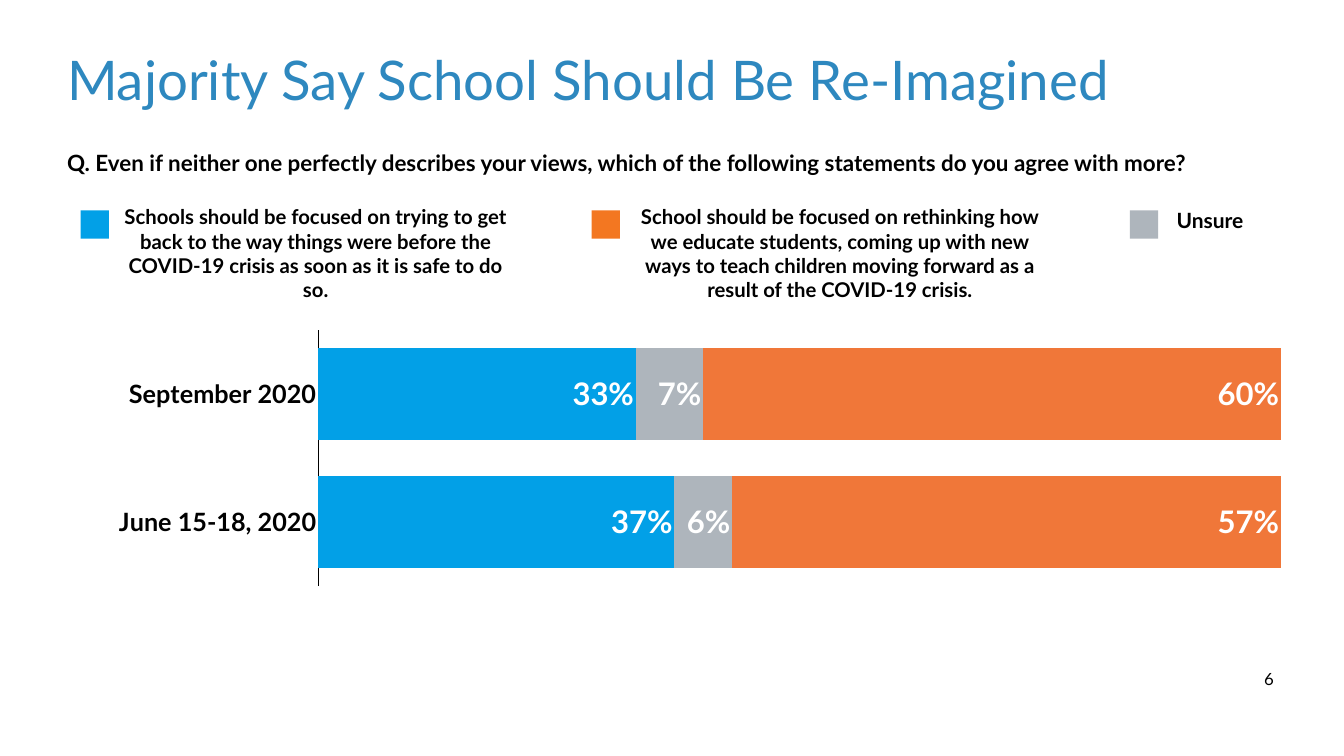
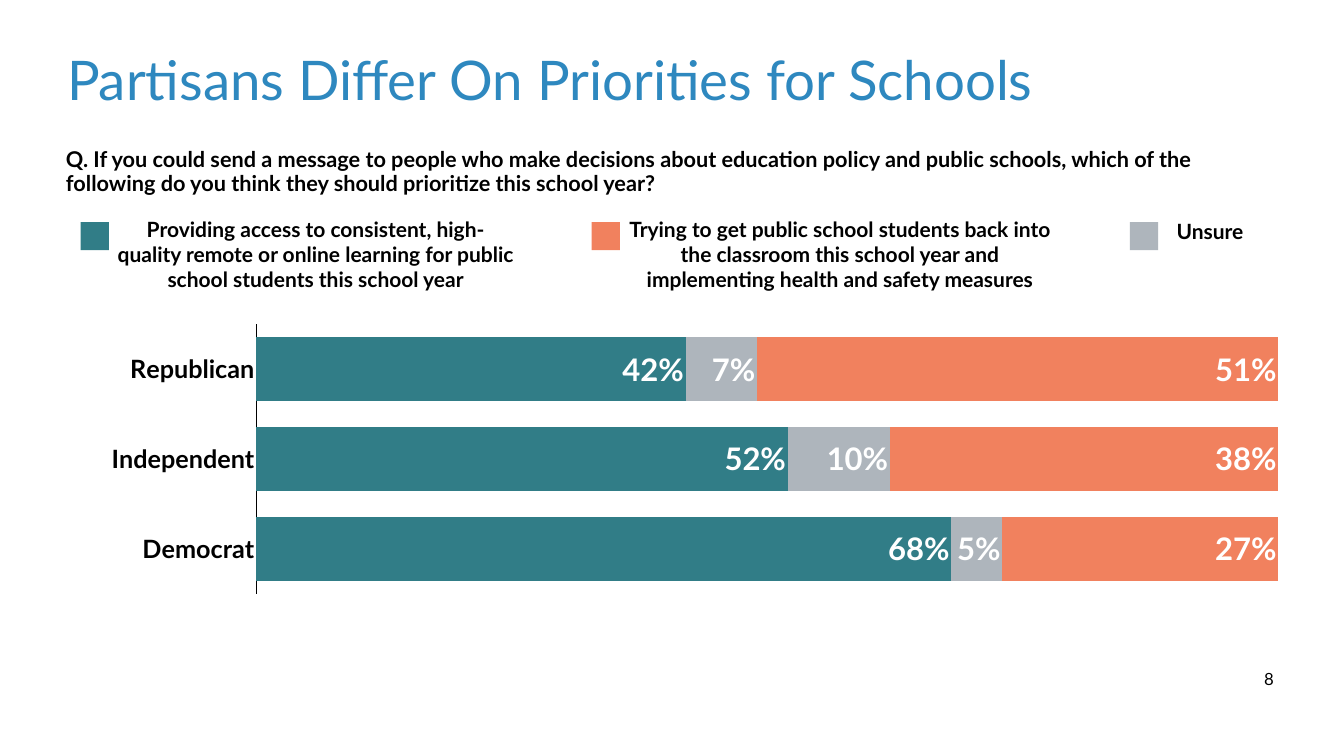
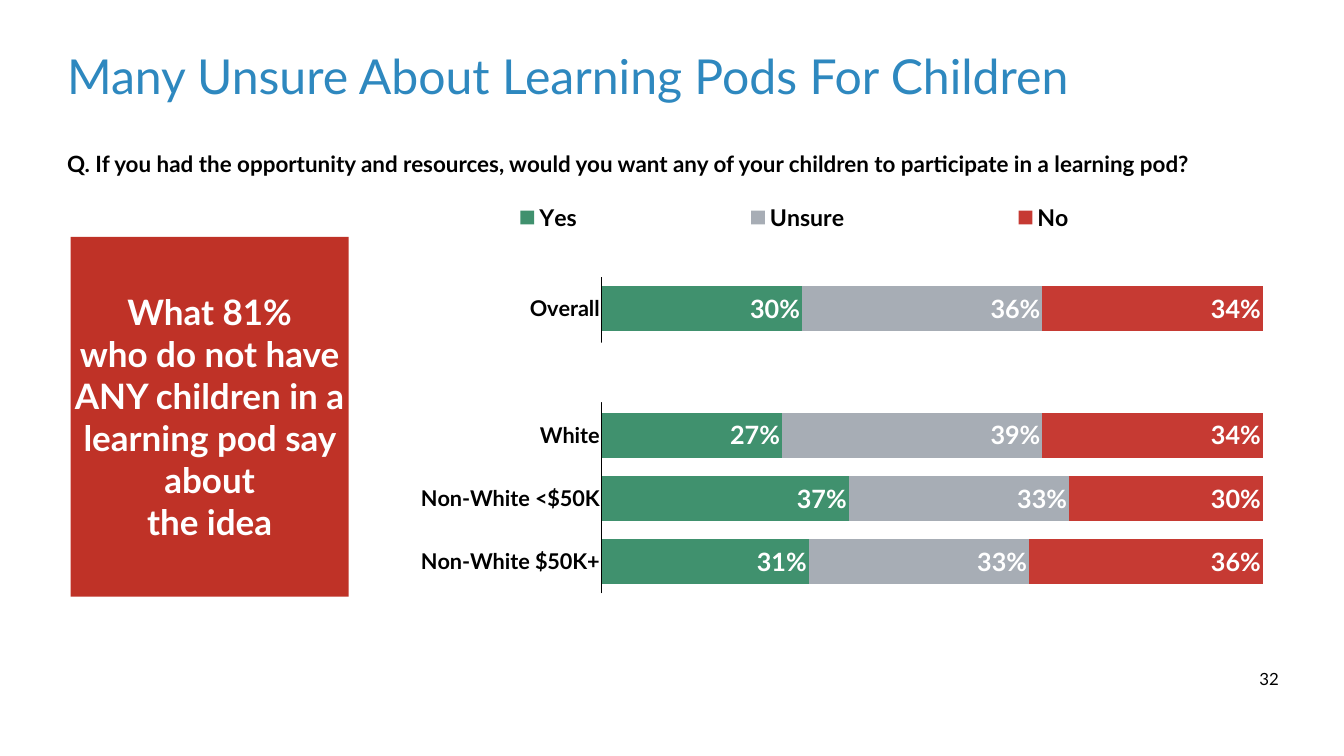
from lxml import etree
from pptx import Presentation
from pptx import util as u
from pptx.chart import data as cd
from pptx.dml import color as dc
from pptx.enum import chart as ec, shapes, text
from pptx.oxml import ns

WIDE, HIGH = 26.67, 15
COL, ROW = WIDE / 100, HIGH / 100
FONT = "Lato"
HUE = {
    "title": "2E88BF", "ink": "000000", "white": "FFFFFF", "gray": "AEB5BC",
    "blue": "02A0E7", "orange": "F07739", "key": "F37721",
    "teal": "317D87", "coral": "F1815E",
    "green": "40916E", "slate": "A7ADB5", "red": "C63A33", "brick": "BF3227",
}
MID = text.PP_ALIGN.CENTER
LEFT = text.PP_ALIGN.LEFT
AXIS = {"has_major_gridlines": False, "has_minor_gridlines": False,
        "major_tick_mark": ec.XL_TICK_MARK.NONE, "minor_tick_mark": ec.XL_TICK_MARK.NONE}
PLOT = {"gap_width": 40, "overlap": 100, "vary_by_categories": False}
LABEL = {"show_value": True, "number_format": "#,##0%", "number_format_is_linked": False,
         "position": ec.XL_LABEL_POSITION.INSIDE_END}
INSET = {f"margin_{side}": u.Inches(0.08) for side in ("left", "top", "right", "bottom")}


def put(item, vals):
    for name, val in vals.items():
        setattr(item, name, val)


def rgb(hue):
    return dc.RGBColor.from_string(HUE[hue])


def style(font, size, hue="ink", bold=True):
    put(font, {"name": FONT, "size": u.Pt(size), "bold": bold})
    font.color.rgb = rgb(hue)


def grid(box):
    x, y, w, h = box
    return [u.Inches(n) for n in (x * COL, y * ROW, w * COL, h * ROW)]


def fill(frame, lines, size, hue="ink", bold=True, align=LEFT, wrap=True,
         anchor=text.MSO_ANCHOR.TOP, space=None):
    put(frame, INSET | {"word_wrap": wrap, "vertical_anchor": anchor})
    frame.text = "\n".join(lines)
    for para in frame.paragraphs:
        put(para, {"alignment": align, "line_spacing": space})
        style(para.runs[0].font, size, hue, bold)


def write(area, box, line, size, **look):
    fill(area.add_textbox(*grid(box)).text_frame, [line], size, **look)


def block(area, box, hue):
    rect = area.add_shape(shapes.MSO_SHAPE.RECTANGLE, *grid(box))
    rect.shadow.inherit = False
    rect.fill.solid()
    rect.fill.fore_color.rgb = rgb(hue)
    rect.line.fill.background()
    return rect


def head(area, title, size, ask, box, ask_size=32, space=None):
    write(area, (4.69, 5.6, 90.63, 13.87), title, size, hue="title", bold=False)
    write(area, box, ask, ask_size, space=space)


def foot(area, num):
    wide = 0.52 + 0.79 * len(num)
    write(area, (94.42 - wide / 2, 87.93, wide, 3.73), num, 24,
          bold=False, align=MID, wrap=False)


def keys(slide, box, items, size):
    x, y, _, h = box
    area = slide.shapes.add_group_shape().shapes
    slots = [(0, 2.36, 30.26), (38.02, 40.34, 32.32), (78.07, 74.62, 18.82)]
    for (mark, left, wide), (line, hue) in zip(slots, items):
        last = line == "Unsure"
        write(area, (x + left, y + 0.33 * last, wide, 4.4 if last else h), line,
              30 if last else size, align=MID)
        block(area, (x + mark, y + 1.3, 2.1, 3.73), hue)


def place(parent, after, box, inner=False):
    for old in parent.findall(ns.qn("c:layout")):
        parent.remove(old)
    layout = etree.Element(ns.qn("c:layout"))
    manual = etree.SubElement(layout, ns.qn("c:manualLayout"))
    pairs = [("layoutTarget", "inner")] if inner else []
    pairs += [("xMode", "edge"), ("yMode", "edge"), *zip("xywh", box)]
    for tag, val in pairs:
        etree.SubElement(manual, ns.qn(f"c:{tag}")).set("val", str(val))
    parent.insert(after, layout)


def bars(area, box, cats, rows, inner, top, unit, cat_size=36, size=44.4):
    data = cd.CategoryChartData(number_format="General")
    data.categories = cats
    for name, _, vals in rows:
        data.add_series(name, vals)
    chart = area.add_chart(ec.XL_CHART_TYPE.BAR_STACKED, *grid(box), data).chart
    put(chart, {"has_legend": False, "has_title": False})
    style(chart.font, 10, bold=False)
    plot = chart.plots[0]
    put(plot, PLOT)
    for row, (_, hue, _) in zip(plot.series, rows):
        row.format.fill.solid()
        row.format.fill.fore_color.rgb = rgb(hue)
        put(row, {"invert_if_negative": False})
        put(row.data_labels, LABEL)
        style(row.data_labels.font, size, "white")
    cat, val = chart.category_axis, chart.value_axis
    put(cat, AXIS | {"reverse_order": True})
    style(cat.tick_labels.font, cat_size)
    cat.format.line.color.rgb = rgb("ink")
    cat.format.line.width = u.Pt(1)
    put(val, AXIS | {"minimum_scale": 0, "maximum_scale": top, "major_unit": unit,
                     "tick_label_position": ec.XL_TICK_LABEL_POSITION.NONE})
    val.format.line.fill.background()
    place(chart.element.find(f".//{ns.qn('c:plotArea')}"), 0, inner, True)
    return chart


def split(deck, num, title, ask, items, cats, rows, spot):
    slide = deck.slides.add_slide(deck.slide_layouts[6])
    area = slide.shapes
    head(area, title, 78, ask, spot["ask"], spot["size"], spot["space"])
    foot(area, num)
    bars(area, spot["chart"], cats, rows, spot["plot"], 1.25, 0.25)
    keys(slide, spot["keys"], items, spot["text"])


def pods(deck, num, title, ask, note, cats, rows):
    slide = deck.slides.add_slide(deck.slide_layouts[6])
    area = slide.shapes
    head(area, title, 68.8, ask, (4.69, 19.27, 90.63, 7.87))
    foot(area, num)
    fill(block(area, (5.25, 31.33, 20.7, 47.6), "brick").text_frame, note, 50,
         hue="white", align=MID, anchor=text.MSO_ANCHOR.MIDDLE)
    group = area.add_group_shape().shapes
    x, y, w, h = box = (26.32, 26.33, 68.32, 54.33)
    chart = bars(group, box, cats, rows, (0.27, 0.19, 0.72, 0.77), 0.99, 0.25, 31, 36)
    chart.has_legend = True
    put(chart.legend, {"position": ec.XL_LEGEND_POSITION.TOP, "include_in_layout": True})
    style(chart.legend.font, 33)
    place(chart.element.find(f".//{ns.qn('c:legend')}"), 1, (0, 0, 0.96, 0.09))
    block(group, (x + 6.98, y + 19, 15.64, 7.87), "white")


def main():
    deck = Presentation()
    put(deck, {"slide_width": u.Inches(WIDE), "slide_height": u.Inches(HIGH)})
    split(deck, "6", "Majority Say School Should Be Re-Imagined",
          "Q. Even if neither one perfectly describes your views, which of the following "
          "statements do you agree with more?",
          [("Schools should be focused on trying to get back to the way things were before "
            "the COVID-19 crisis as soon as it is safe to do so.", "blue"),
           ("School should be focused on rethinking how we educate students, coming up with "
            "new ways to teach children moving forward as a result of the COVID-19 crisis.",
            "key"),
           ("Unsure", "gray")],
          ["September 2020", "June 15-18, 2020"],
          [("Series 1", "blue", (0.33, 0.37)),
           ("Series 2", "gray", (0.07, 0.06)),
           ("Series 3", "orange", (0.6, 0.57))],
          {"ask": (4.69, 19.2, 90.63, 5.73), "size": 32, "space": None,
           "chart": (4.01, 39.67, 109.22, 39.87), "plot": (0.18, 0.1, 0.82, 0.85),
           "keys": (6, 26.53, 93.44, 14.07), "text": 29})
    split(deck, "8", "Partisans Differ On Priorities for Schools",
          "Q. If you could send a message to people who make decisions about education policy "
          "and public schools, which of the following do you think they should prioritize "
          "this school year?",
          [("Providing access to consistent, high-quality remote or online learning for "
            "public school students this school year", "teal"),
           ("Trying to get public school students back into the classroom this school year "
            "and implementing health and safety measures", "coral"),
           ("Unsure", "gray")],
          ["Republican", "Independent", "Democrat"],
          [("Series 1", "teal", (0.42, 0.52, 0.68)),
           ("Series 2", "gray", (0.07, 0.1, 0.05)),
           ("Series 3", "coral", (0.51, 0.38, 0.27))],
          {"ask": (4.61, 19.2, 90.63, 7.87), "size": 31, "space": 0.9,
           "chart": (3.6, 39.13, 110.54, 41.93), "plot": (0.14, 0.09, 0.86, 0.85),
           "keys": (6, 28.07, 93.44, 11.07), "text": 30})
    pods(deck, "32", "Many Unsure About Learning Pods For Children",
         "Q. If you had the opportunity and resources, would you want any of your children "
         "to participate in a learning pod?",
         ["What 81%", "who do not have ANY children in a learning pod say about", "the idea"],
         ["Overall", "", "White", "Non-White <$50K", "Non-White $50K+"],
         [("Yes", "green", (0.3, None, 0.27, 0.37, 0.31)),
          ("Unsure", "slate", (0.36, None, 0.39, 0.33, 0.33)),
          ("No", "red", (0.34, None, 0.34, 0.3, 0.36))])
    deck.save("out.pptx")


if __name__ == "__main__":
    main()
